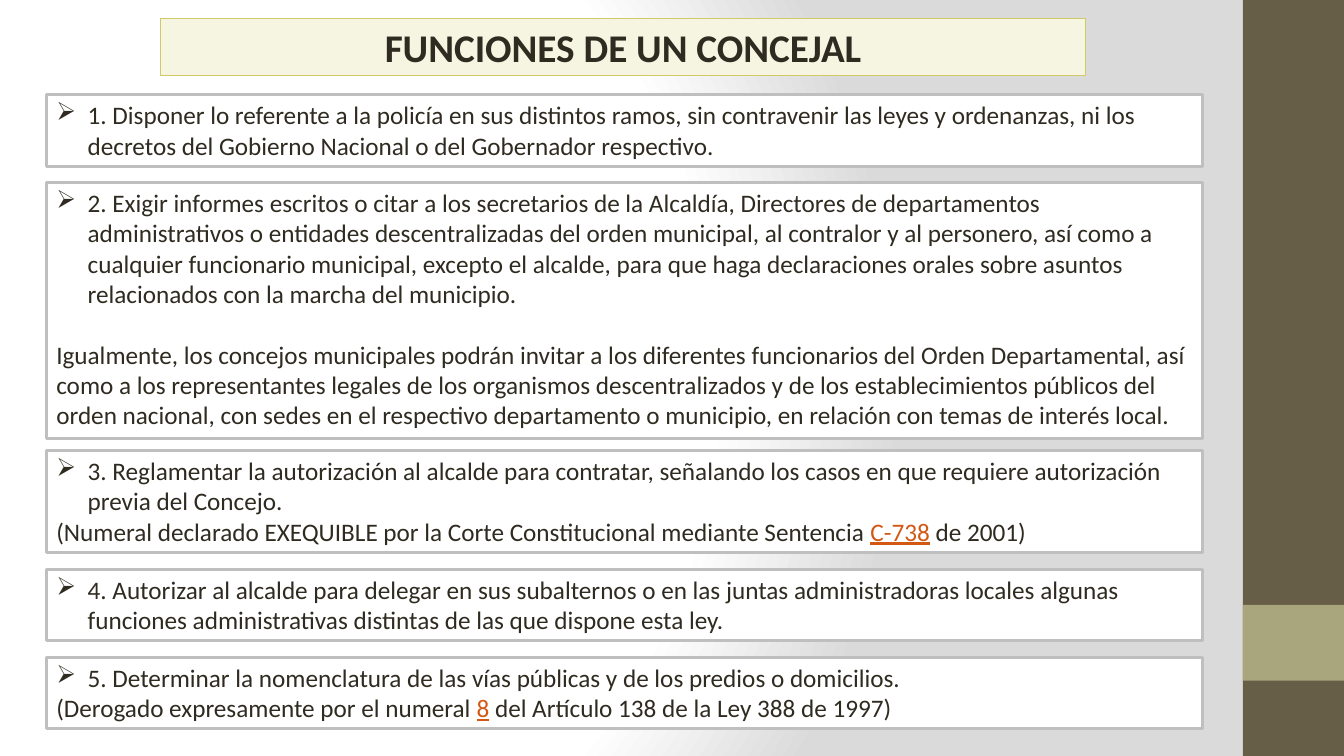
from lxml import etree
from pptx import Presentation
from pptx.dml.color import RGBColor
from pptx.enum import shapes, text
from pptx.oxml import parse_xml
from pptx.oxml.ns import nsdecls, qn
from pptx.util import Cm, Pt

INK, LINK, EDGE, WHITE = "2F2B20", "D25814", "BFBFBF", "FFFFFF"
HEAD = "FUNCIONES DE UN CONCEJAL"
BARS = [(0, 19.05, "675E47"), (15.24, 1.91, "A9A57C")]
LEFT, WIDTH, ROW, PAD, HANG = 1.17, 29.13, 0.775, 0.25, 0.79

# top, lines, bullet text, gap before the note in points, note runs
BOXES = [
    (2.39, 2, "1. Disponer lo referente a la policía en sus distintos ramos, sin contravenir las leyes y ordenanzas, ni los decretos del Gobierno Nacional o del Gobernador respectivo.", 0, []),
    (4.6, 8, "2. Exigir informes escritos o citar a los secretarios de la Alcaldía, Directores de departamentos administrativos o entidades descentralizadas del orden municipal, al contralor y al personero, así como a cualquier funcionario municipal, excepto el alcalde, para que haga declaraciones orales sobre asuntos relacionados con la marcha del municipio.", 22,
     [("Igualmente, los concejos municipales podrán invitar a los diferentes funcionarios del Orden Departamental, así como a los representantes legales de los organismos descentralizados y de los establecimientos públicos del orden nacional, con sedes en el respectivo departamento o municipio, en relación con temas de interés local.", False)]),
    (11.35, 3, "3. Reglamentar la autorización al alcalde para contratar, señalando los casos en que requiere autorización previa del Concejo.", 0,
     [("(Numeral declarado EXEQUIBLE por la Corte Constitucional mediante Sentencia ", False), ("C-738", True), (" de 2001)", False)]),
    (14.35, 2, "4. Autorizar al alcalde para delegar en sus subalternos o en las juntas administradoras locales algunas funciones administrativas distintas de las que dispone esta ley.", 0, []),
    (16.56, 2, "5. Determinar la nomenclatura de las vías públicas y de los predios o domicilios.", 0,
     [("(Derogado expresamente por el numeral ", False), ("8", True), (" del Artículo 138 de la Ley 388 de 1997)", False)]),
]
GLOW = f"""<a:gradFill {nsdecls('a')} rotWithShape="1"><a:gsLst>
<a:gs pos="0"><a:srgbClr val="FFFFFF"/></a:gs>
<a:gs pos="75000"><a:srgbClr val="FFFFFF"/></a:gs>
<a:gs pos="100000"><a:srgbClr val="DADADA"/></a:gs></a:gsLst>
<a:path path="circle"><a:fillToRect l="20000" t="50000" r="100000" b="50000"/></a:path></a:gradFill>"""


def color(val):
    return RGBColor.from_string(val)


def paint(shape, fill, edge=None, width=1):
    shape.fill.solid()
    shape.fill.fore_color.rgb = color(fill)
    if edge:
        shape.line.color.rgb = color(edge)
        shape.line.width = Pt(width)
    else:
        shape.line.fill.background()


def rect(x, y, w, h):
    shape = slide.shapes.add_shape(shapes.MSO_SHAPE.RECTANGLE, Cm(x), Cm(y), Cm(w), Cm(h))
    shape.shadow.inherit = False
    return shape


def write(para, words, size=18, bold=False, link=False):
    run = para.add_run()
    run.text = words
    font = run.font
    font.name, font.size, font.bold = "Calibri", Pt(size), bold
    font.color.rgb = color(LINK if link else INK)
    if link:
        font.underline = True


def bullet(para):
    props = para._p.get_or_add_pPr()
    props.set("marL", str(Cm(HANG)))
    props.set("indent", str(-Cm(HANG)))
    etree.SubElement(props, qn("a:buChar")).set("char", "➢")


deck = Presentation()
deck.slide_width, deck.slide_height = Cm(33.87), Cm(19.05)
slide = deck.slides.add_slide(deck.slide_layouts[5])

slide.background.fill.gradient()
old = slide._element.xpath(".//p:bgPr/a:gradFill")[0]
old.getparent().replace(old, parse_xml(GLOW))

for top, high, fill in BARS:
    paint(rect(31.32, top, 2.55, high), fill)

title = slide.shapes.title
title.left, title.top, title.width, title.height = Cm(4.04), Cm(0.46), Cm(23.32), Cm(1.45)
paint(title, "F6F5E2", "D0C967")
frame = title.text_frame
frame.auto_size = text.MSO_AUTO_SIZE.NONE
frame.vertical_anchor = text.MSO_ANCHOR.MIDDLE
frame.paragraphs[0].alignment = text.PP_ALIGN.CENTER
write(frame.paragraphs[0], HEAD, 28, True)

for top, lines, duty, gap, note in BOXES:
    box = rect(LEFT, top, WIDTH, lines * ROW + PAD)
    paint(box, WHITE, EDGE, 2)
    frame = box.text_frame
    frame.word_wrap = True
    frame.vertical_anchor = text.MSO_ANCHOR.TOP
    para = frame.paragraphs[0]
    para.alignment = text.PP_ALIGN.LEFT
    bullet(para)
    write(para, duty)
    if note:
        para = frame.add_paragraph()
        para.alignment = text.PP_ALIGN.LEFT
        para.space_before = Pt(gap)
        for words, link in note:
            write(para, words, link=link)

deck.save("out.pptx")
